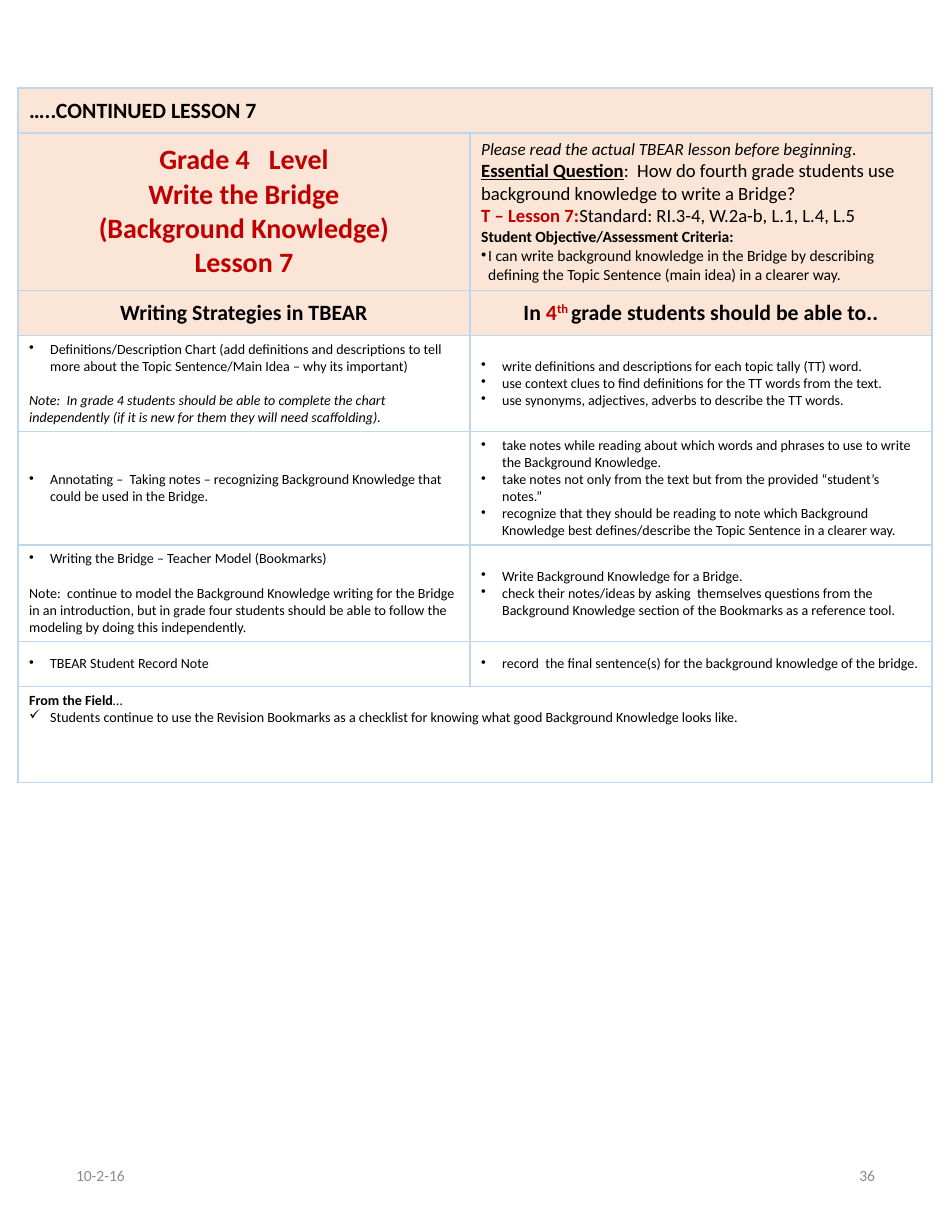
from lxml import etree
from pptx import Presentation
from pptx.dml.color import RGBColor
from pptx.enum.text import MSO_ANCHOR, PP_ALIGN
from pptx.oxml.ns import qn
from pptx.util import Pt

PX = 914400 // 112
LEFT, CENTER, RIGHT = PP_ALIGN.LEFT, PP_ALIGN.CENTER, PP_ALIGN.RIGHT
TOP, MIDDLE = MSO_ANCHOR.TOP, MSO_ANCHOR.MIDDLE
FONT = "Calibri"
COLORS = {
    "text": "000000",
    "accent": "C00000",
    "header": "FBE5D6",
    "body": "FFFFFF",
    "border": "BDD7EE",
    "footer": "8C8C8C",
}

BOLD = {"bold": True}
ITALIC = {"italic": True}
RED = {"bold": True, "color": "accent"}

# Paragraph styles: size and space before in points, indent in px
STYLES = {
    "heading": {"size": 14, "bold": True},
    "column": {"size": 14, "bold": True, "align": CENTER},
    "lesson": {"size": 18, "bold": True, "color": "accent", "align": CENTER},
    "reminder": {"size": 11, "italic": True},
    "question": {"size": 12},
    "criteria": {"size": 10, "bold": True},
    "objective": {"size": 10, "bullet": "•", "indent": 7},
    "body": {"size": 9},
    "note": {"size": 9, "before": 11},
    "point": {"size": 9, "bullet": "•", "indent": 21},
    "check": {"size": 9, "bullet": "✓", "indent": 21},
    "date": {"size": 10, "color": "footer"},
    "number": {"size": 10, "color": "footer", "align": RIGHT},
}


def write(frame, paragraphs):
    """Fill a text frame from (style name, run, run...), a run being text or (text, format)."""
    for i, (style_name, *runs) in enumerate(paragraphs):
        style = STYLES[style_name]
        paragraph = frame.add_paragraph() if i else frame.paragraphs[0]
        paragraph.alignment = style.get("align", LEFT)
        if "before" in style:
            paragraph.space_before = Pt(style["before"])
        if "bullet" in style:
            p_pr = paragraph._p.get_or_add_pPr()
            p_pr.set("marL", str(style["indent"] * PX))
            p_pr.set("indent", str(-style["indent"] * PX))
            etree.SubElement(p_pr, qn("a:buChar")).set("char", style["bullet"])
        for item in runs:
            text, extra = (item, {}) if isinstance(item, str) else item
            look = {"bold": False, "italic": False, "underline": False,
                    "color": "text", **style, **extra}
            run = paragraph.add_run()
            run.text = text
            run.font.name = FONT
            run.font.size = Pt(look["size"])
            run.font.color.rgb = RGBColor.from_string(COLORS[look["color"]])
            for name in ("bold", "italic", "underline"):
                setattr(run.font, name, look[name])
            if "baseline" in look:
                run._r.get_or_add_rPr().set("baseline", str(look["baseline"]))


def add_borders(cell):
    tc_pr = cell._tc.get_or_add_tcPr()
    for side in ("lnL", "lnR", "lnT", "lnB"):
        line = etree.SubElement(tc_pr, qn(f"a:{side}"), w=str(Pt(1)))
        fill = etree.SubElement(line, qn("a:solidFill"))
        etree.SubElement(fill, qn("a:srgbClr"), val=COLORS["border"])


# One entry per row: height in px, fill, anchor, then the cells (one cell spans both columns)
ROWS = [
    (45, "header", MIDDLE, [
        [("heading", "…..CONTINUED LESSON 7")],
    ]),
    (155, "header", MIDDLE, [
        [("lesson", "Grade 4   Level"),
         ("lesson", "Write the Bridge"),
         ("lesson", "(Background Knowledge)"),
         ("lesson", "Lesson 7")],
        [("reminder", "Please read the actual TBEAR lesson before beginning."),
         ("question", ("Essential Question", {"bold": True, "underline": True}),
          ":  How do fourth grade students use background knowledge to write a Bridge?"),
         ("question", ("T – Lesson 7:", RED), "Standard: RI.3-4, W.2a-b, L.1, L.4, L.5"),
         ("criteria", "Student Objective/Assessment Criteria:"),
         ("objective", "I can write background knowledge in the Bridge by describing "
          "defining the Topic Sentence (main idea) in a clearer way.")],
    ]),
    (45, "header", MIDDLE, [
        [("column", "Writing Strategies in TBEAR")],
        [("column", "In ", ("4", RED), ("th ", {**RED, "baseline": 30000}),
          "grade students should be able to..")],
    ]),
    (92, "body", MIDDLE, [
        [("point", "Definitions/Description Chart (add definitions and descriptions to tell "
          "more about the Topic Sentence/Main Idea – why its important)"),
         ("note", ("Note:  In grade 4 students should be able to complete the chart "
                   "independently (if it is new for them they will need scaffolding).", ITALIC))],
        [("point", "write definitions and descriptions for each topic tally (TT) word."),
         ("point", "use context clues to find definitions for the TT words from the text."),
         ("point", "use synonyms, adjectives, adverbs to describe the TT words.")],
    ]),
    (112, "body", MIDDLE, [
        [("point", "Annotating –  Taking notes – recognizing Background Knowledge that "
          "could be used in the Bridge.")],
        [("point", "take notes while reading about which words and phrases to use to write "
          "the Background Knowledge."),
         ("point", "take notes not only from the text but from the provided “student’s notes.”"),
         ("point", "recognize that they should be reading to note which Background Knowledge "
          "best defines/describe the Topic Sentence in a clearer way.")],
    ]),
    (95, "body", MIDDLE, [
        [("point", "Writing the Bridge – Teacher Model (Bookmarks)"),
         ("note", "Note:  continue to model the Background Knowledge writing for the Bridge "
          "in an introduction, but in grade four students should be able to follow the "
          "modeling by doing this independently.")],
        [("point", "Write Background Knowledge for a Bridge."),
         ("point", "check their notes/ideas by asking  themselves questions from the "
          "Background Knowledge section of the Bookmarks as a reference tool.")],
    ]),
    (45, "body", MIDDLE, [
        [("point", "TBEAR Student Record Note")],
        [("point", "record  the final sentence(s) for the background knowledge of the bridge.")],
    ]),
    (96, "body", TOP, [
        [("body", ("From the Field", BOLD), "…"),
         ("check", "Students continue to use the Revision Bookmarks as a checklist for "
          "knowing what good Background Knowledge looks like.")],
    ]),
]
COLUMN_WIDTHS = [452, 462]

prs = Presentation()
prs.slide_width, prs.slide_height = 952 * PX, 1232 * PX
slide = prs.slides.add_slide(prs.slide_layouts[6])

lesson_table = slide.shapes.add_table(
    len(ROWS), len(COLUMN_WIDTHS), 18 * PX, 88 * PX,
    sum(COLUMN_WIDTHS) * PX, sum(row[0] for row in ROWS) * PX).table
lesson_table.first_row = False
lesson_table.horz_banding = False
for column, width in zip(lesson_table.columns, COLUMN_WIDTHS):
    column.width = width * PX

for r, (height, fill, anchor, contents) in enumerate(ROWS):
    lesson_table.rows[r].height = height * PX
    if len(contents) == 1:
        lesson_table.cell(r, 0).merge(lesson_table.cell(r, 1))
    for cell in lesson_table.rows[r].cells:
        add_borders(cell)
        cell.fill.solid()
        cell.fill.fore_color.rgb = RGBColor.from_string(COLORS[fill])
        cell.vertical_anchor = anchor
    for c, paragraphs in enumerate(contents):
        write(lesson_table.cell(r, c).text_frame, paragraphs)

for left, style_name, text in [(65, "date", "10-2-16"), (672, "number", "36")]:
    footer = slide.shapes.add_textbox(left * PX, 1142 * PX, 214 * PX, 66 * PX).text_frame
    footer.word_wrap = True
    footer.vertical_anchor = MIDDLE
    write(footer, [(style_name, text)])

prs.save("out.pptx")
